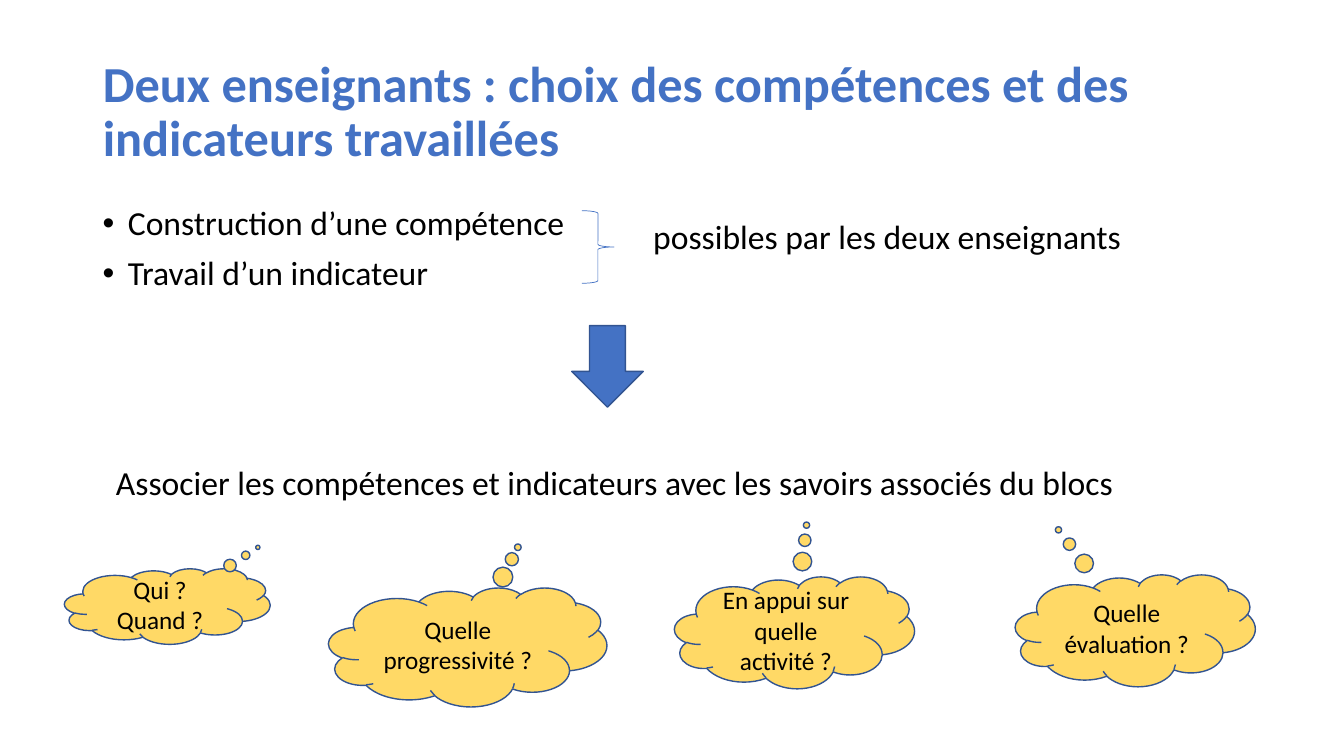
from dataclasses import dataclass

from lxml.etree import SubElement
from pptx import Presentation
from pptx.dml.color import RGBColor
from pptx.enum.shapes import MSO_SHAPE
from pptx.enum.text import MSO_ANCHOR, PP_ALIGN
from pptx.oxml.ns import qn
from pptx.util import Pt

# Content: boxes are left, top, width, height in px
SLIDE_SIZE = (1333, 750)
TITLE = ("Deux enseignants : choix des compétences et des indicateurs travaillées", (92, 40, 1150, 145))
BULLETS = (["Construction d’une compétence", "Travail d’un indicateur"], (92, 200, 1150, 467))
BRACE_BOX = (577, 209, 32, 72)
BRACE_NOTE = ("possibles par les deux enseignants", (638, 209, 488, 81))
ARROW_BOX = (567, 323, 71, 81)
CONCLUSION = (
    "Associer les compétences et indicateurs avec les savoirs associés du blocs",
    (92, 453, 1035, 50),
)
# Text, box, offset of the thought bubbles from the cloud's centre
CLOUDS = [
    ("Qui ? Quand ?", (64, 564, 204, 75), (0.44, -0.78)),
    ("En appui sur quelle activité ?", (669, 572, 238, 111), (0.05, -0.96)),
    ("Quelle progressivité ?", (326, 583, 276, 118), (0.18, -0.84)),
    ("Quelle évaluation ?", (1007, 570, 238, 111), (-0.32, -0.9)),
]
EMU_PER_PX = 9144
BULLET_INDENT = 25


@dataclass(frozen=True)
class Theme:
    font: str = "Calibri"
    blue: RGBColor = RGBColor(0x44, 0x72, 0xC4)
    outline: RGBColor = RGBColor(0x32, 0x54, 0x91)
    yellow: RGBColor = RGBColor(0xFF, 0xD9, 0x66)
    black: RGBColor = RGBColor(0, 0, 0)
    title_size: int = 36
    body_size: int = 24
    cloud_size: int = 18


THEME = Theme()
TIGHT = {"line_spacing": 0.9, "alignment": PP_ALIGN.LEFT}
CENTRED = {"alignment": PP_ALIGN.CENTER}


def emu(*lengths):
    return [length * EMU_PER_PX for length in lengths]


def set_attributes(target, values):
    for name, value in values.items():
        setattr(target, name, value)


def write(shape, lines, size, color=THEME.black, bold=False, anchor=MSO_ANCHOR.TOP, layout=None):
    frame = shape.text_frame
    set_attributes(frame, {"text": "\n".join(lines), "word_wrap": True, "vertical_anchor": anchor})
    for paragraph in frame.paragraphs:
        set_attributes(paragraph, layout or {})
        font = paragraph.runs[0].font
        set_attributes(font, {"name": THEME.font, "size": Pt(size), "bold": bold})
        font.color.rgb = color


def add_text(slide, lines, box, **style):
    text_box = slide.shapes.add_textbox(*emu(*box))
    write(text_box, lines, THEME.body_size, **style)
    return text_box


def add_bullet(paragraph):
    properties = paragraph._p.get_or_add_pPr()
    indent, = emu(BULLET_INDENT)
    properties.set("marL", str(indent))
    properties.set("indent", str(-indent))
    SubElement(properties, qn("a:buFont"), typeface="Arial")
    SubElement(properties, qn("a:buChar"), char="•")


def add_figure(slide, kind, box, fill=None, line=THEME.outline, line_width=1):
    shape = slide.shapes.add_shape(kind, *emu(*box))
    shape.shadow.inherit = False
    if fill is None:
        shape.fill.background()
    else:
        shape.fill.solid()
        shape.fill.fore_color.rgb = fill
    shape.line.color.rgb = line
    shape.line.width = Pt(line_width)
    return shape


def main():
    presentation = Presentation()
    presentation.slide_width, presentation.slide_height = emu(*SLIDE_SIZE)
    slide = presentation.slides.add_slide(presentation.slide_layouts[5])

    # Title
    text, box = TITLE
    title = slide.shapes.title
    set_attributes(title, dict(zip(("left", "top", "width", "height"), emu(*box))))
    write(title, [text], THEME.title_size, THEME.blue, True, MSO_ANCHOR.MIDDLE, TIGHT)

    # Bulleted points, brace and its note
    lines, box = BULLETS
    points = add_text(slide, lines, box, layout={**TIGHT, "space_before": Pt(10)})
    for paragraph in points.text_frame.paragraphs:
        add_bullet(paragraph)
    add_figure(slide, MSO_SHAPE.RIGHT_BRACE, BRACE_BOX, line=THEME.blue, line_width=0.5)
    text, box = BRACE_NOTE
    add_text(slide, [text], box)

    # Arrow and conclusion
    add_figure(slide, MSO_SHAPE.DOWN_ARROW, ARROW_BOX, THEME.blue)
    text, box = CONCLUSION
    add_text(slide, [text], box, layout=CENTRED)

    # Question clouds
    for text, box, bubble_offset in CLOUDS:
        cloud = add_figure(slide, MSO_SHAPE.CLOUD_CALLOUT, box, THEME.yellow)
        for index, offset in enumerate(bubble_offset):
            cloud.adjustments[index] = offset
        write(cloud, [text], THEME.cloud_size, anchor=MSO_ANCHOR.MIDDLE, layout=CENTRED)

    presentation.save("out.pptx")


if __name__ == "__main__":
    main()
